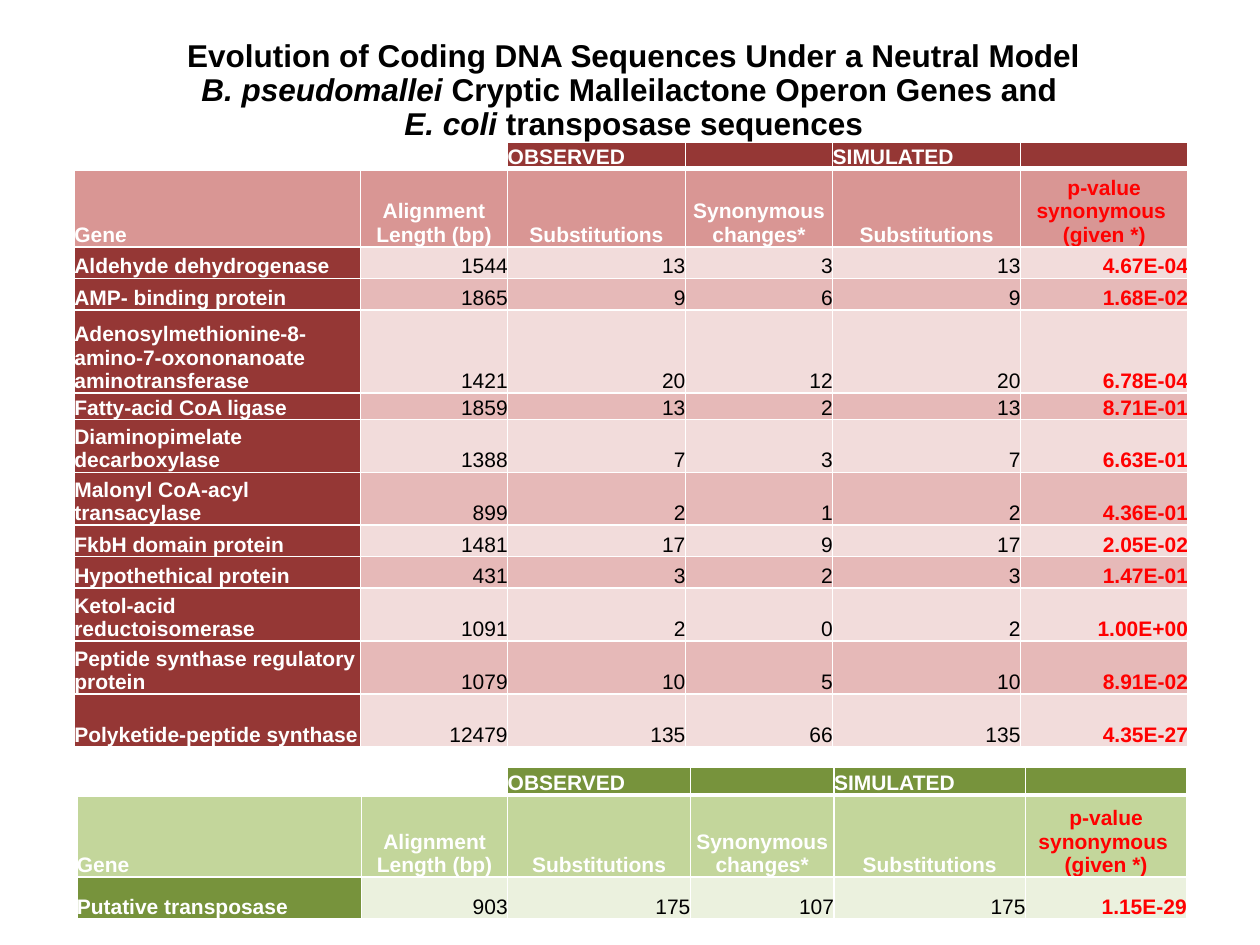
from lxml import etree
from pptx import Presentation
from pptx.dml.color import RGBColor
from pptx.enum.text import MSO_ANCHOR, MSO_AUTO_SIZE, PP_ALIGN
from pptx.oxml.ns import qn
from pptx.util import Inches, Pt

LEFT, CENTER, RIGHT = PP_ALIGN.LEFT, PP_ALIGN.CENTER, PP_ALIGN.RIGHT
TOP, BOTTOM = MSO_ANCHOR.TOP, MSO_ANCHOR.BOTTOM
NO_AUTOFIT = MSO_AUTO_SIZE.NONE

BLACK = RGBColor(0x00, 0x00, 0x00)
WHITE = RGBColor(0xFF, 0xFF, 0xFF)
RED = RGBColor(0xFF, 0x00, 0x00)
DARK_RED = RGBColor(0x95, 0x37, 0x35)
ROSE = RGBColor(0xD9, 0x96, 0x94)
PALE_ROSE = RGBColor(0xF2, 0xDC, 0xDB)
LIGHT_ROSE = RGBColor(0xE6, 0xB9, 0xB8)
DARK_GREEN = RGBColor(0x77, 0x93, 0x3C)
LIGHT_GREEN = RGBColor(0xC3, 0xD6, 0x9B)
PALE_GREEN = RGBColor(0xEB, 0xF1, 0xDE)


def write(paragraph, text, size=12, color=WHITE, bold=True, italic=False, align=LEFT):
    paragraph.alignment = align
    run = paragraph.add_run()
    run.text = text
    font = run.font
    font.name = "Arial"
    font.size = Pt(size)
    font.color.rgb = color
    font.bold = bold
    font.italic = italic


def set_borders(cell, top, bottom):
    properties = cell._tc.get_or_add_tcPr()
    for side, points in (("L", 1), ("R", 1), ("T", top), ("B", bottom)):
        line = etree.SubElement(properties, qn(f"a:ln{side}"), w=str(Pt(points)))
        solid = etree.SubElement(line, qn("a:solidFill"))
        etree.SubElement(solid, qn("a:srgbClr"), val=str(WHITE))


prs = Presentation()
prs.slide_width = Inches(10)
prs.slide_height = Inches(7.5)
slide = prs.slides.add_slide(prs.slide_layouts[5])

title = slide.shapes.title
title.left, title.top = Inches(0.24), Inches(0.27)
title.width, title.height = Inches(9.58), Inches(0.69)
title_frame = title.text_frame
title_frame.auto_size = NO_AUTOFIT
title_frame.word_wrap = True
title_frame.vertical_anchor = TOP
title_frame.margin_left = title_frame.margin_right = 0
title_frame.margin_top = title_frame.margin_bottom = Inches(0.05)
heading = title_frame.paragraphs[0]
heading.line_spacing = 0.9
title_lines = [
    [("Evolution of Coding DNA Sequences Under a Neutral Model", False)],
    [("B. pseudomallei ", True), ("Cryptic Malleilactone Operon Genes and ", False)],
    [("E. coli ", True), ("transposase sequences", False)],
]
for number, title_line in enumerate(title_lines):
    if number:
        heading.add_line_break()
    for text, italic in title_line:
        write(heading, text, size=18, color=BLACK, italic=italic, align=CENTER)

group_row = ["", "", "OBSERVED", "", "SIMULATED", ""]
header_row = ["Gene", "Alignment Length (bp)", "Substitutions", "Synonymous changes*",
              "Substitutions", "p-value synonymous \n(given *)"]
operon_genes = [
    ["Aldehyde dehydrogenase", "1544", "13", "3", "13", "4.67E-04"],
    ["AMP- binding protein", "1865", "9", "6", "9", "1.68E-02"],
    ["Adenosylmethionine-8-amino-7-oxononanoate aminotransferase",
     "1421", "20", "12", "20", "6.78E-04"],
    ["Fatty-acid CoA ligase", "1859", "13", "2", "13", "8.71E-01"],
    ["Diaminopimelate decarboxylase", "1388", "7", "3", "7", "6.63E-01"],
    ["Malonyl CoA-acyl transacylase", "899", "2", "1", "2", "4.36E-01"],
    ["FkbH domain protein", "1481", "17", "9", "17", "2.05E-02"],
    ["Hypothethical protein", "431", "3", "2", "3", "1.47E-01"],
    ["Ketol-acid reductoisomerase", "1091", "2", "0", "2", "1.00E+00"],
    ["Peptide synthase regulatory protein", "1079", "10", "5", "10", "8.91E-02"],
    ["Polyketide-peptide synthase", "12479", "135", "66", "135", "4.35E-27"],
]
transposase_genes = [["Putative transposase", "903", "175", "107", "175", "1.15E-29"]]

gene_tables = [
    (operon_genes, 0.59, 1.13, [2.27, 1.17, 1.41, 1.17, 1.49, 1.33],
     [0.21, 0.62, 0.25, 0.25, 0.66, 0.21, 0.42, 0.42, 0.25, 0.25, 0.42, 0.42, 0.42],
     DARK_RED, ROSE, [PALE_ROSE, LIGHT_ROSE]),
    (transposase_genes, 0.61, 6.09, [2.26, 1.16, 1.45, 1.14, 1.52, 1.28],
     [0.22, 0.65, 0.33],
     DARK_GREEN, LIGHT_GREEN, [PALE_GREEN]),
]

for genes, left, top, widths, heights, dark, header_fill, bands in gene_tables:
    rows = [group_row, header_row] + genes
    table = slide.shapes.add_table(
        len(rows), len(widths), Inches(left), Inches(top),
        Inches(sum(widths)), Inches(sum(heights))).table
    table.first_row = False
    table.horz_banding = False
    for column, width in zip(table.columns, widths):
        column.width = Inches(width)
    for r, values in enumerate(rows):
        table.rows[r].height = Inches(heights[r])
        for c, value in enumerate(values):
            cell = table.cell(r, c)
            cell.margin_left = cell.margin_right = 0
            cell.margin_top = cell.margin_bottom = 0
            cell.vertical_anchor = BOTTOM
            set_borders(cell, top=3 if r == 1 else 1, bottom=3 if r == 0 else 1)

            color, bold, align = WHITE, True, LEFT
            if r == 0:
                fill = WHITE if c < 2 else dark
            elif r == 1:
                fill = header_fill
                align = CENTER if c else LEFT
                color = RED if c == 5 else WHITE
            elif c == 0:
                fill = dark
            else:
                fill = bands[r % len(bands)]
                align = RIGHT
                bold = c == 5
                color = RED if bold else BLACK
            cell.fill.solid()
            cell.fill.fore_color.rgb = fill

            frame = cell.text_frame
            if not value:
                etree.SubElement(frame.paragraphs[0]._p, qn("a:endParaRPr"), sz="1200")
                continue
            for number, text in enumerate(value.split("\n")):
                paragraph = frame.add_paragraph() if number else frame.paragraphs[0]
                write(paragraph, text, color=color, bold=bold, align=align)

prs.save("out.pptx")
